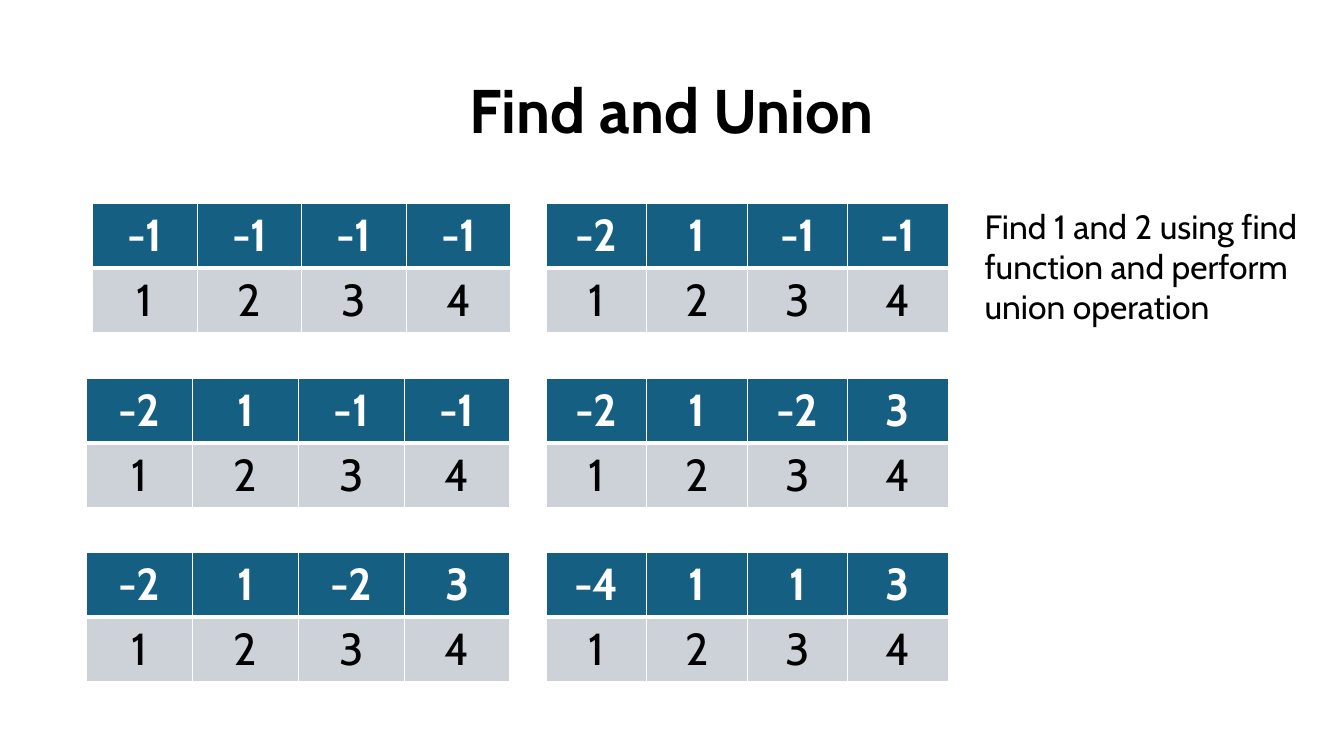
from lxml import etree
from pptx import Presentation
from pptx.dml.color import RGBColor
from pptx.enum import text
from pptx.oxml import ns
from pptx.util import Pt

FONT = "Cabin"
WHITE, BLACK, BLUE, GREY = "FFFFFF", "000000", "156082", "CCD2D8"
TOP, ROW_STEP, ROW_HEIGHT = 145.4, 124.6, 45.6
LEFT_X, RIGHT_X = 62, 390.2
NODES = ["1", "2", "3", "4"]

# left, column width, step down the slide, parent of each node
ARRAYS = [
    (66.2, 74.7, 0, ["-1", "-1", "-1", "-1"]),
    (RIGHT_X, 71.8, 0, ["-2", "1", "-1", "-1"]),
    (LEFT_X, 75.6, 1, ["-2", "1", "-1", "-1"]),
    (RIGHT_X, 71.8, 1, ["-2", "1", "-2", "3"]),
    (LEFT_X, 75.6, 2, ["-2", "1", "-2", "3"]),
    (RIGHT_X, 71.8, 2, ["-4", "1", "1", "3"]),
]


def rgb(value):
    return RGBColor.from_string(value)


def write(tf, words, size, color=BLACK, bold=False, align=text.PP_ALIGN.LEFT):
    p = tf.paragraphs[0]
    p.alignment = align
    r = p.add_run()
    r.text = words
    for name, value in {"name": FONT, "size": Pt(size), "bold": bold}.items():
        setattr(r.font, name, value)
    r.font.color.rgb = rgb(color)
    return p


def add_border(cell, side, width):
    """Draw one white edge; call before the cell is filled."""
    line = etree.SubElement(cell._tc.get_or_add_tcPr(), ns.qn(f"a:ln{side}"), w=str(Pt(width)))
    fill = etree.SubElement(line, ns.qn("a:solidFill"))
    etree.SubElement(fill, ns.qn("a:srgbClr"), val=WHITE)


def format_cell(cell, words, header):
    widths = {"L": 1, "R": 1, "T": 1 if header else 3, "B": 3 if header else 1}
    for side, width in widths.items():
        add_border(cell, side, width)
    cell.fill.solid()
    cell.fill.fore_color.rgb = rgb(BLUE if header else GREY)
    write(cell.text_frame, words, 32, WHITE if header else BLACK, header,
          text.PP_ALIGN.CENTER)


def add_array(slide, left, column_width, step, parents):
    """Place a table with the parents above their node numbers."""
    rows = [parents, NODES]
    table = slide.shapes.add_table(
        len(rows), len(NODES), Pt(left), Pt(TOP + step * ROW_STEP),
        Pt(column_width * len(NODES)), Pt(ROW_HEIGHT * len(rows))).table
    for column in table.columns:
        column.width = Pt(column_width)
    for i, values in enumerate(rows):
        table.rows[i].height = Pt(ROW_HEIGHT)
        for j, value in enumerate(values):
            format_cell(table.cell(i, j), value, header=i == 0)


def add_title(slide, words):
    sp = slide.shapes.title
    box = {"left": 66, "top": 28.8, "width": 828, "height": 104.4}
    for name, value in box.items():
        setattr(sp, name, Pt(value))
    tf = sp.text_frame
    tf.vertical_anchor = text.MSO_ANCHOR.MIDDLE
    p = write(tf, words, 44, bold=True, align=text.PP_ALIGN.CENTER)
    p.line_spacing = 0.9


def add_note(slide, words):
    sp = slide.shapes.add_textbox(Pt(696.2), Pt(143.3), Pt(251.3), Pt(94.3))
    tf = sp.text_frame
    tf.word_wrap = True
    tf.auto_size = text.MSO_AUTO_SIZE.SHAPE_TO_FIT_TEXT
    write(tf, words, 24)


def main():
    prs = Presentation()
    prs.slide_width, prs.slide_height = Pt(960), Pt(540)
    slide = prs.slides.add_slide(prs.slide_layouts.get_by_name("Title Only"))
    add_title(slide, "Find and Union")
    for array in ARRAYS:
        add_array(slide, *array)
    add_note(slide, "Find 1 and 2 using find function and perform union operation")
    prs.save("out.pptx")


if __name__ == "__main__":
    main()
